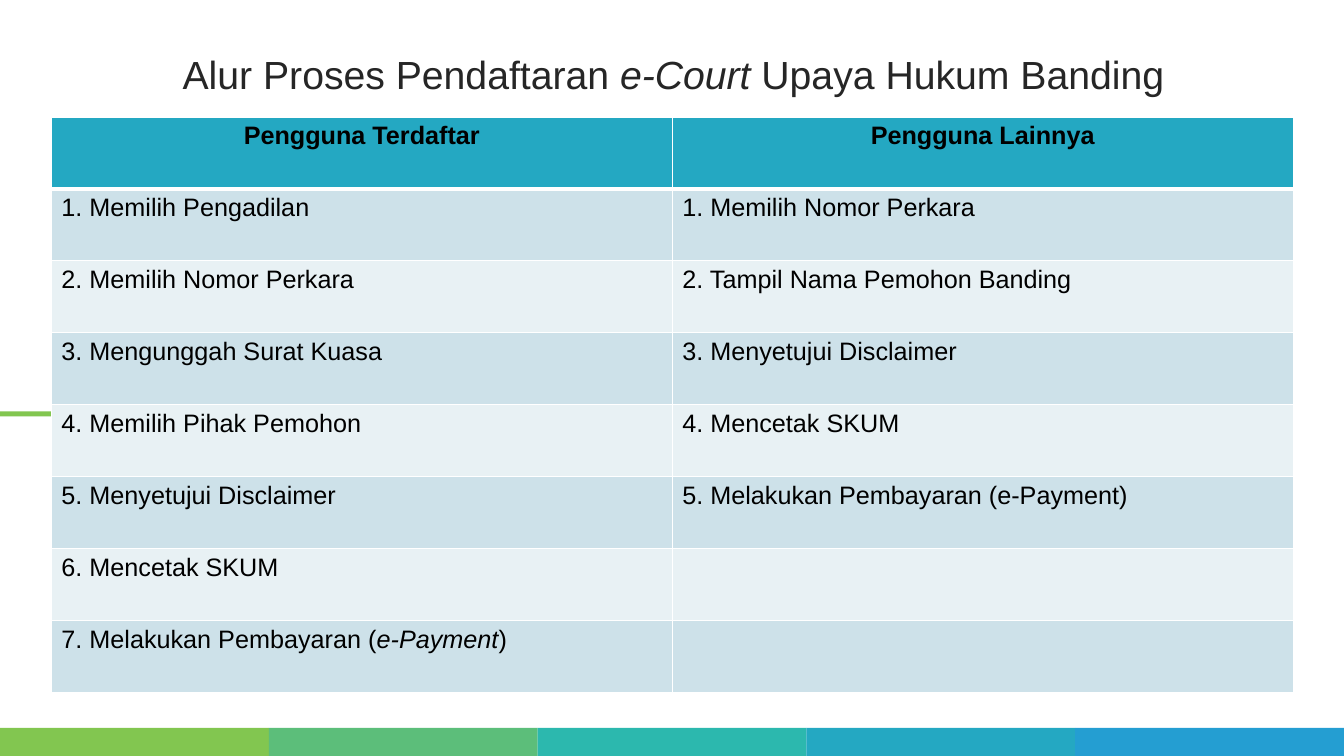
from pptx import Presentation
from pptx.dml.color import RGBColor
from pptx.enum.shapes import MSO_SHAPE as Shape
from pptx.enum.text import MSO_ANCHOR as Anchor, MSO_AUTO_SIZE as Fit, PP_ALIGN as Align
from pptx.oxml import parse_xml
from pptx.oxml.ns import nsdecls
from pptx.util import Inches, Pt

GREEN = RGBColor(0x82, 0xC6, 0x50)
MINT = RGBColor(0x5C, 0xBE, 0x7A)
TEAL = RGBColor(0x2C, 0xB8, 0xAE)
CYAN = RGBColor(0x24, 0xA8, 0xC2)
BLUE = RGBColor(0x24, 0x9E, 0xD2)
DARK = RGBColor(0x26, 0x26, 0x26)
BLACK = RGBColor(0, 0, 0)
BANDS = [RGBColor(0xCD, 0xE1, 0xE9), RGBColor(0xE8, 0xF1, 0xF4)]

WIDE, HIGH = 13.333, 7.5
TITLE = [("Alur Proses Pendaftaran ", False), ("e-Court ", True),
         ("Upaya Hukum Banding", False)]
HEADS = ["Pengguna Terdaftar", "Pengguna Lainnya"]
STEPS = [
    ["Memilih Pengadilan", "Memilih Nomor Perkara", "Mengunggah Surat Kuasa",
     "Memilih Pihak Pemohon", "Menyetujui Disclaimer", "Mencetak SKUM",
     [("Melakukan Pembayaran (", False), ("e-Payment", True), (")", False)]],
    ["Memilih Nomor Perkara", "Tampil Nama Pemohon Banding",
     "Menyetujui Disclaimer", "Mencetak SKUM",
     "Melakukan Pembayaran (e-Payment)"],
]
TITLE_FONT = {"name": "Arial", "size": Pt(28), "bold": False}
HEAD_FONT = {"name": "Arial", "size": Pt(18), "bold": True}
STEP_FONT = {**HEAD_FONT, "bold": False}


def add_bar(slide, left, top, width, height, color):
    bar = slide.shapes.add_shape(Shape.RECTANGLE, Inches(left), Inches(top),
                                 Inches(width), Inches(height))
    bar.shadow.inherit = False
    bar.fill.solid()
    bar.fill.fore_color.rgb = color
    bar.line.fill.background()


def add_runs(para, parts, style, color):
    """Write (text, italic) pairs into a paragraph."""
    for text, slant in parts:
        run = para.add_run()
        run.text = text
        for key, value in {**style, "italic": slant}.items():
            setattr(run.font, key, value)
        run.font.color.rgb = color


def set_title(slide):
    title = slide.shapes.title
    place = {"left": 0.35, "top": 0.37, "width": 12.66, "height": 0.79}
    for key, value in place.items():
        setattr(title, key, Inches(value))
    frame = title.text_frame
    frame.auto_size = Fit.NONE
    frame.vertical_anchor = Anchor.MIDDLE
    para = frame.paragraphs[0]
    form = {"alignment": Align.CENTER, "line_spacing": 0.9,
            "space_before": Pt(10)}
    for key, value in form.items():
        setattr(para, key, value)
    add_runs(para, TITLE, TITLE_FONT, DARK)


def style_cell(cell, color, base=1):
    """Set white borders, with the bottom one base points wide, and a fill."""
    props = cell._tc.get_or_add_tcPr()
    for side, width in {"L": 1, "R": 1, "T": 1, "B": base}.items():
        props.append(parse_xml(
            f'<a:ln{side} {nsdecls("a")} w="{Pt(width)}"><a:solidFill>'
            f'<a:srgbClr val="FFFFFF"/></a:solidFill></a:ln{side}>'))
    cell.fill.solid()
    cell.fill.fore_color.rgb = color


def add_steps(slide):
    count = max(map(len, STEPS))
    table = slide.shapes.add_table(count + 1, len(HEADS), Inches(0.51),
                                   Inches(1.16), Inches(12.32),
                                   Inches(5.71)).table
    for col, (head, steps) in enumerate(zip(HEADS, STEPS)):
        top = table.cell(0, col)
        style_cell(top, CYAN, 3)
        para = top.text_frame.paragraphs[0]
        para.alignment = Align.CENTER
        add_runs(para, [(head, False)], HEAD_FONT, BLACK)
        for row in range(1, count + 1):
            style_cell(table.cell(row, col), BANDS[(row - 1) % 2],)
        for row, step in enumerate(steps, 1):
            parts = [(step, False)] if isinstance(step, str) else step
            (first, slant), *rest = parts
            add_runs(table.cell(row, col).text_frame.paragraphs[0],
                     [(f"{row}. {first}", slant), *rest], STEP_FONT, BLACK)


def main():
    deck = Presentation()
    deck.slide_width, deck.slide_height = Inches(WIDE), Inches(HIGH)
    slide = deck.slides.add_slide(deck.slide_layouts[5])
    colors = [GREEN, MINT, TEAL, CYAN, BLUE]
    width = WIDE / len(colors)
    for i, color in enumerate(colors):
        add_bar(slide, i * width, 7.22, width, 0.28, color)
    add_bar(slide, 0, 4.08, 1.93, 0.05, GREEN)
    set_title(slide)
    add_steps(slide)
    deck.save("out.pptx")


if __name__ == "__main__":
    main()
